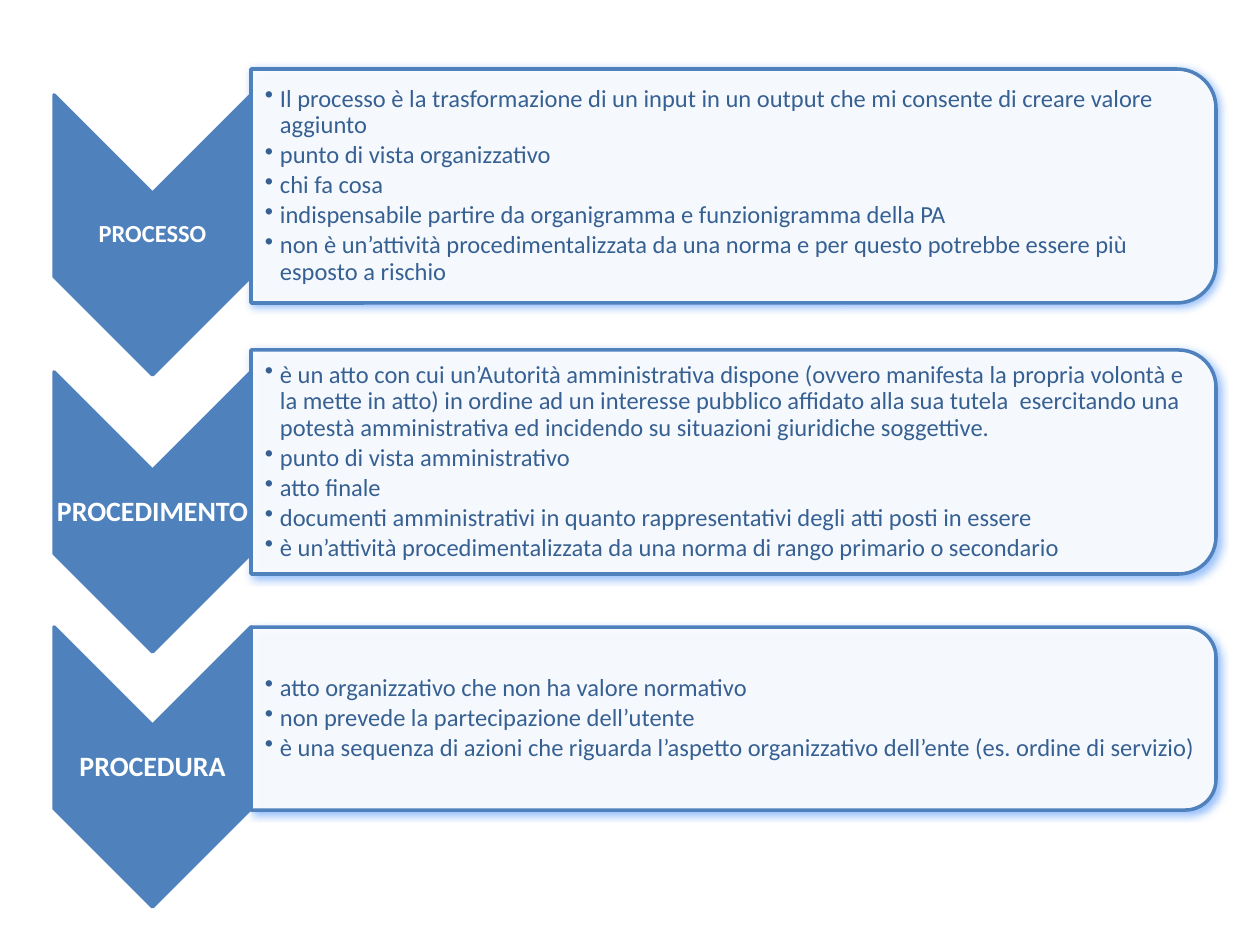
from dataclasses import dataclass

from lxml.etree import SubElement
from pptx import Presentation
from pptx.dml.color import RGBColor
from pptx.enum.shapes import MSO_SHAPE as Preset
from pptx.enum.text import MSO_ANCHOR as Anchor, PP_ALIGN as Align
from pptx.oxml import parse_xml
from pptx.oxml.ns import nsdecls, qn
from pptx.util import Emu, Pt

BLUE = RGBColor(0x4F, 0x81, 0xBD)
INK = RGBColor(0x37, 0x60, 0x92)
WHITE = RGBColor(0xFF, 0xFF, 0xFF)
HALO = RGBColor(0x4A, 0x90, 0xF8)
FONT = "Calibri"

ARROW_X, ARROW_W, ARROW_H = 54, 197, 280
PANEL_X, PANEL_W = 251, 965
LABEL_DY, LABEL_H = 98, 84
INDENT = 15


@dataclass
class Step:
    name: str
    size: int
    arrow_y: int
    panel_y: int
    panel_h: int
    points: list[str]


STEPS = [
    Step("PROCESSO", 14, 95, 69, 234, [
        "Il processo è la trasformazione di un input in un output che mi consente di creare valore aggiunto",
        "punto di vista organizzativo",
        "chi fa cosa",
        "indispensabile partire da organigramma e funzionigramma della PA",
        "non è un’attività procedimentalizzata da una norma e per questo potrebbe essere più esposto a rischio",
    ]),
    Step("PROCEDIMENTO", 16, 372, 350, 224, [
        "è un atto con cui un’Autorità amministrativa dispone (ovvero manifesta la propria volontà e "
        "la mette in atto) in ordine ad un interesse pubblico affidato alla sua tutela  esercitando una "
        "potestà amministrativa ed incidendo su situazioni giuridiche soggettive.",
        "punto di vista amministrativo",
        "atto finale",
        "documenti amministrativi in quanto rappresentativi degli atti posti in essere",
        "è un’attività procedimentalizzata da una norma di rango primario o secondario",
    ]),
    Step("PROCEDURA", 16, 627, 627, 183, [
        "atto organizzativo che non ha valore normativo",
        "non prevede la partecipazione dell’utente",
        "è una sequenza di azioni che riguarda l’aspetto organizzativo dell’ente (es. ordine di servizio)",
    ]),
]


def px(n: float) -> Emu:
    return Emu(round(n * 914400 / 126))


def add_turned(slide, kind: Preset, x: int, y: int, w: int, h: int, fill: RGBColor):
    """Add a shape turned by 90 degrees that covers the given box."""
    shape = slide.shapes.add_shape(
        kind, px(x + (w - h) / 2), px(y + (h - w) / 2), px(h), px(w))
    shape.rotation = 90
    shape.shadow.inherit = False
    shape.fill.solid()
    shape.fill.fore_color.rgb = fill
    shape.line.color.rgb = BLUE
    shape.line.width = Pt(2)
    return shape


def add_halo(shape) -> None:
    """Let the fill show a soft blue shadow through it."""
    props = shape._element.spPr
    color = props.find(qn("a:solidFill")).find(qn("a:srgbClr"))
    SubElement(color, qn("a:alpha")).set("val", "90000")
    props.find(qn("a:effectLst")).append(parse_xml(
        f'<a:outerShdw {nsdecls("a")} blurRad="63500" dist="20000" dir="2700000" '
        f'algn="ctr" rotWithShape="0"><a:srgbClr val="{HALO}">'
        '<a:alpha val="60000"/></a:srgbClr></a:outerShdw>'))


def add_text(slide, x: int, y: int, w: int, h: int, lines: list[str],
             size: int, color: RGBColor, left: int = 1):
    frame = slide.shapes.add_textbox(px(x), px(y), px(w), px(h)).text_frame
    frame.word_wrap = True
    frame.vertical_anchor = Anchor.MIDDLE
    frame.margin_left = px(left)
    frame.margin_top = frame.margin_right = frame.margin_bottom = px(1)
    frame.text = "\n".join(lines)
    for para in frame.paragraphs:
        para.line_spacing = 0.9
        para.font.name = FONT
        para.font.size = Pt(size)
        para.font.color.rgb = color
    return frame


def add_bullet(para) -> None:
    para.space_after = Pt(2)
    props = para._p.get_or_add_pPr()
    props.set("marL", str(px(INDENT)))
    props.set("indent", str(-px(INDENT)))
    mark = parse_xml(f'<a:buChar {nsdecls("a")} char="•"/>')
    props.insert_element_before(mark, "a:tabLst", "a:defRPr", "a:extLst")


def draw_step(slide, step: Step) -> None:
    # Arrow and its label
    add_turned(slide, Preset.CHEVRON, ARROW_X, step.arrow_y, ARROW_W, ARROW_H, BLUE)
    label = add_text(slide, ARROW_X, step.arrow_y + LABEL_DY, ARROW_W, LABEL_H,
                     [step.name], step.size, WHITE).paragraphs[0]
    label.alignment = Align.CENTER
    label.font.bold = True

    # Panel and its points
    box = PANEL_X, step.panel_y, PANEL_W, step.panel_h
    add_halo(add_turned(slide, Preset.ROUND_2_SAME_RECTANGLE, *box, WHITE))
    frame = add_text(slide, PANEL_X, step.panel_y + 11, PANEL_W - 10,
                     step.panel_h - 22, step.points, 14, INK, left=14)
    for para in frame.paragraphs:
        add_bullet(para)


def main() -> None:
    deck = Presentation()
    deck.slide_width, deck.slide_height = px(1260), px(945)
    slide = deck.slides.add_slide(deck.slide_layouts[6])
    for step in STEPS:
        draw_step(slide, step)
    deck.save("out.pptx")


if __name__ == "__main__":
    main()
